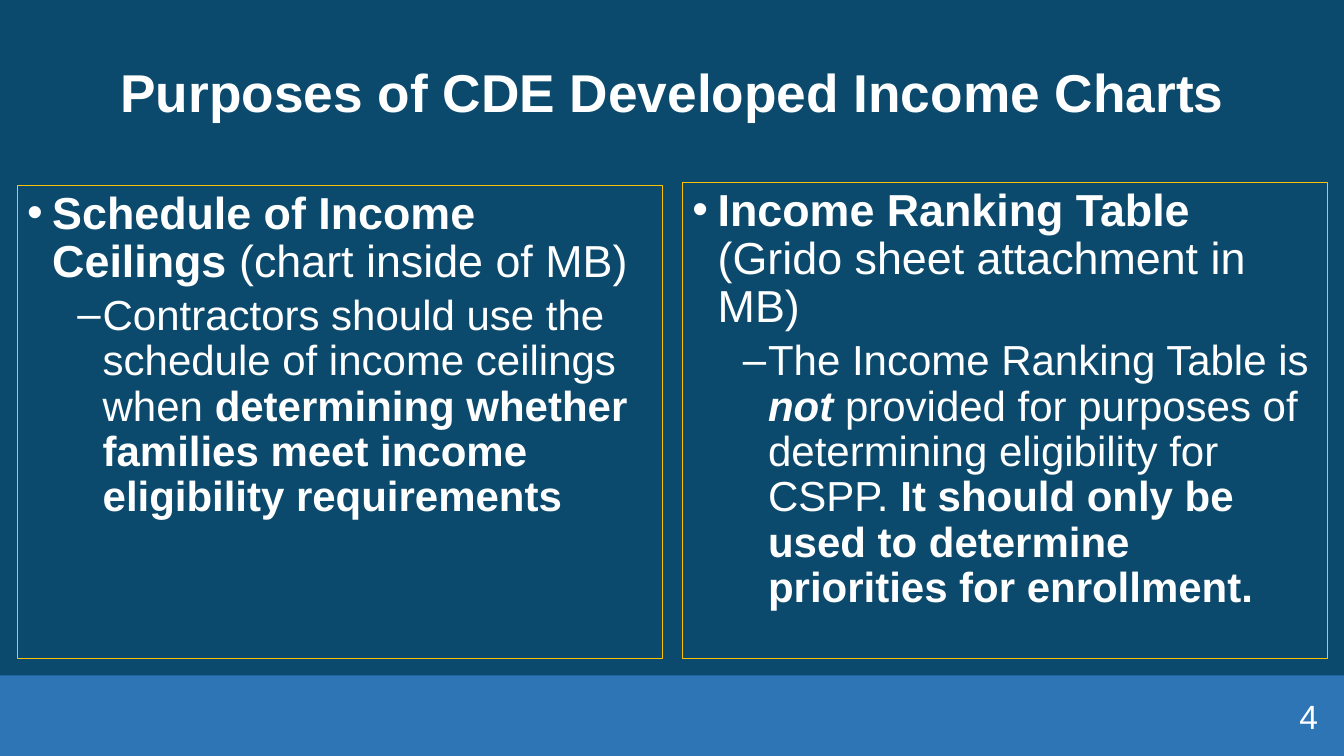
from lxml import etree
from pptx import Presentation
from pptx.dml.color import RGBColor
from pptx.enum.shapes import MSO_SHAPE
from pptx.enum.text import MSO_ANCHOR, PP_ALIGN
from pptx.oxml.ns import qn
from pptx.util import Inches, Pt

NAVY = RGBColor(0x0C, 0x4A, 0x6D)
BLUE = RGBColor(0x2E, 0x75, 0xB6)
GOLD = RGBColor(0xFF, 0xC0, 0x00)
WHITE = RGBColor(0xFF, 0xFF, 0xFF)
RECTANGLE = MSO_SHAPE.RECTANGLE
TOP, MIDDLE = MSO_ANCHOR.TOP, MSO_ANCHOR.MIDDLE
LEFT, CENTER, RIGHT = PP_ALIGN.LEFT, PP_ALIGN.CENTER, PP_ALIGN.RIGHT

WIDTH, HEIGHT = 13.33, 7.5
MARGIN = 0.17
COLUMN = 6.4
COLUMN_STEP = 6.6
PANEL_BOTTOM = 6.53
BAND = 0.8
LEVELS = [("•", 0.25, 32, 0), ("‒", 0.75, 30, 5)]
HANG = 0.25

PANELS = [
    (1.84, [
        [("Schedule of Income Ceilings", "b"), (" (chart inside of MB)", "")],
        [("Contractors should use the schedule of income ceilings when ", ""),
         ("determining whether families meet income eligibility requirements", "b")],
    ]),
    (1.81, [
        [("Income Ranking Table", "b"), (" (Grido sheet attachment in MB)", "")],
        [("The Income Ranking Table is ", ""),
         ("not", "bi"),
         (" provided for purposes of determining eligibility for CSPP. ", ""),
         ("It should only be used to determine priorities for enrollment.", "b")],
    ]),
]


def write(para, text, size, bold=False, italic=False):
    span = para.add_run()
    span.text = text
    font = span.font
    font.name = "Arial"
    font.size = Pt(size)
    font.bold = bold
    font.italic = italic
    font.color.rgb = WHITE


class Page:
    def __init__(self, deck):
        self.slide = deck.slides.add_slide(deck.slide_layouts[6])
        fill = self.slide.background.fill
        fill.solid()
        fill.fore_color.rgb = NAVY

    def band(self, left, top, width, height):
        box = self.rectangle(left, top, width, height)
        box.fill.solid()
        box.fill.fore_color.rgb = BLUE
        box.line.fill.background()

    def rectangle(self, *place):
        box = self.slide.shapes.add_shape(RECTANGLE, *map(Inches, place))
        box.shadow.inherit = False
        return box

    def label(self, text, place, size, align, bold=False, spacing=1.0):
        box = self.slide.shapes.add_textbox(*map(Inches, place))
        frame = box.text_frame
        frame.word_wrap = True
        frame.vertical_anchor = MIDDLE
        para = frame.paragraphs[0]
        para.alignment = align
        para.line_spacing = spacing
        write(para, text, size, bold)

    def panel(self, column, top, items):
        left = MARGIN + column * COLUMN_STEP
        box = self.rectangle(left, top, COLUMN, PANEL_BOTTOM - top)
        box.fill.background()
        box.line.color.rgb = GOLD
        box.line.width = Pt(0.75)
        frame = box.text_frame
        frame.word_wrap = True
        frame.vertical_anchor = TOP
        for level, spans in enumerate(items):
            para = frame.add_paragraph() if level else frame.paragraphs[0]
            self.bullet(para, level)
            for text, style in spans:
                write(para, text, LEVELS[level][2], "b" in style, "i" in style)

    def bullet(self, para, level):
        mark, indent, _, before = LEVELS[level]
        para.level = level
        para.alignment = LEFT
        para.line_spacing = 0.9
        para.space_before = Pt(before)
        properties = para._p.get_or_add_pPr()
        properties.set("marL", str(Inches(indent)))
        properties.set("indent", str(-Inches(HANG)))
        etree.SubElement(properties, qn("a:buFont")).set("typeface", "Arial")
        etree.SubElement(properties, qn("a:buChar")).set("char", mark)


def main():
    deck = Presentation()
    deck.slide_width, deck.slide_height = Inches(WIDTH), Inches(HEIGHT)
    page = Page(deck)
    page.band(0, HEIGHT - BAND, WIDTH, BAND)
    page.label("Purposes of CDE Developed Income Charts",
               (MARGIN, 0.22, 13, 1.45), 38, CENTER, bold=True, spacing=0.9)
    for column, (top, items) in enumerate(PANELS):
        page.panel(column, top, items)
    page.label("4", (10.17, 6.9, 3, 0.4), 24, RIGHT)
    deck.save("out.pptx")


if __name__ == "__main__":
    main()
